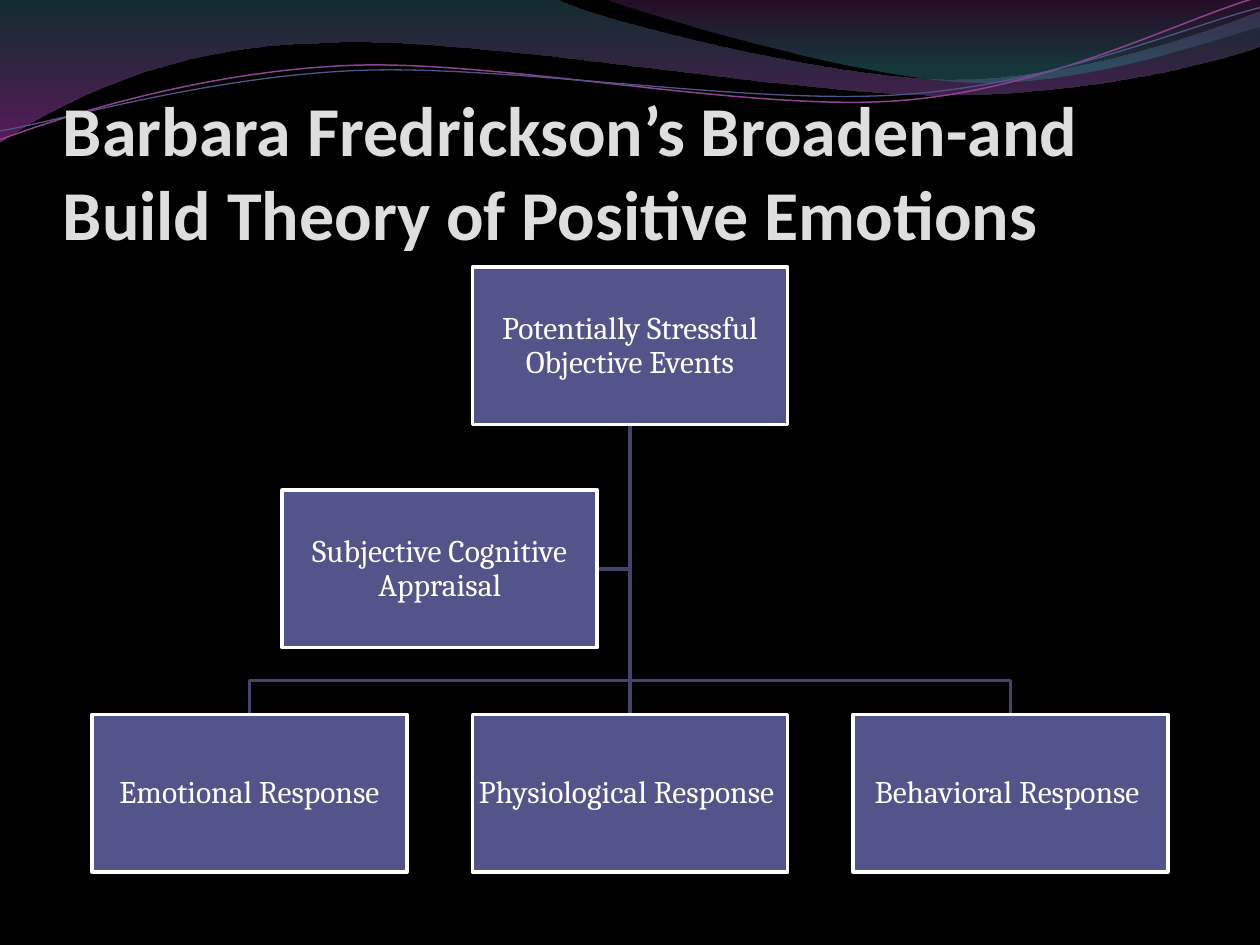
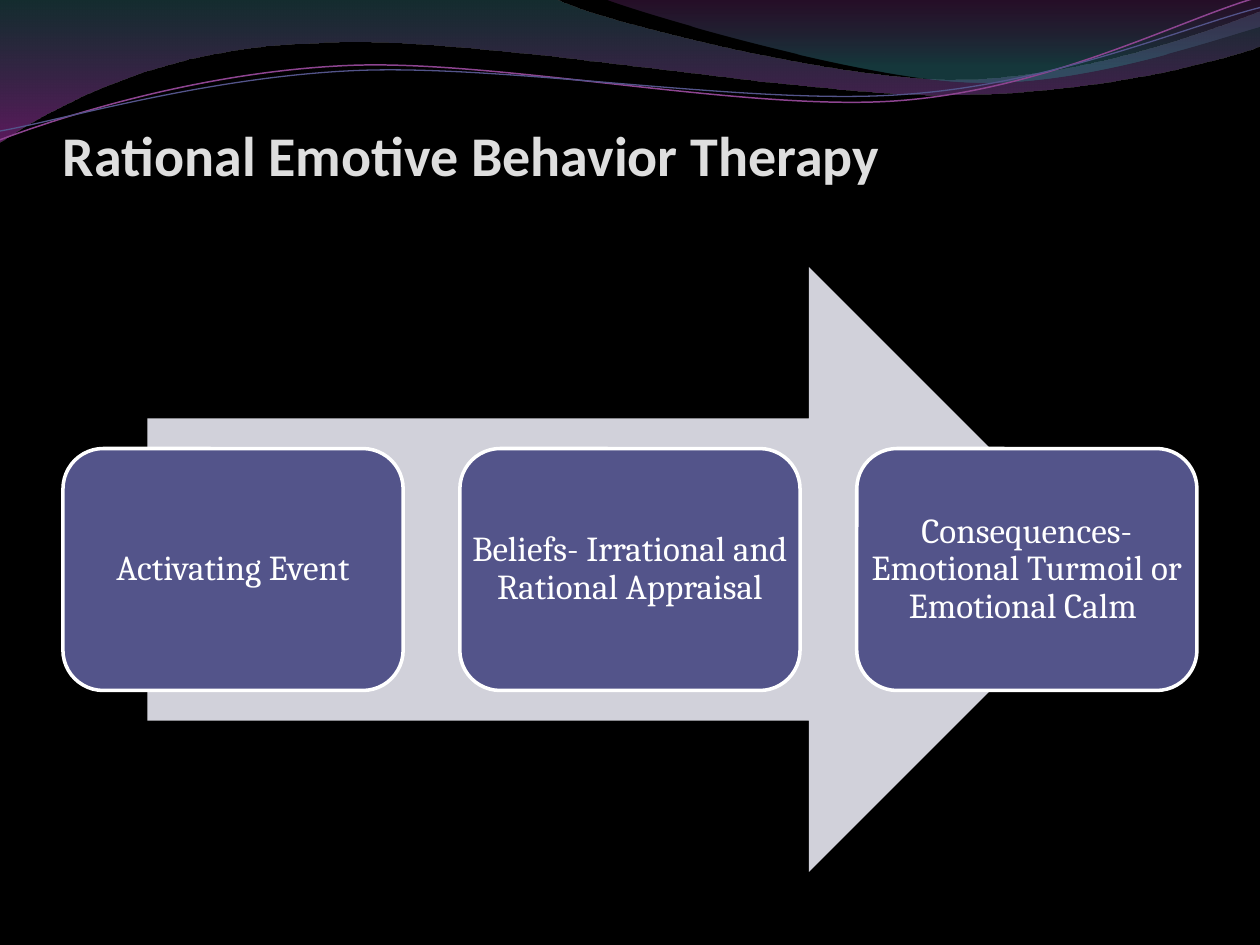
from lxml import etree
from pptx import Presentation
from pptx.dml.color import RGBColor
from pptx.enum.shapes import MSO_CONNECTOR, MSO_SHAPE
from pptx.enum.text import MSO_ANCHOR, MSO_AUTO_SIZE, PP_ALIGN
from pptx.oxml.ns import qn
from pptx.util import Inches, Pt

RECTANGLE = MSO_SHAPE.RECTANGLE
ROUNDED = MSO_SHAPE.ROUNDED_RECTANGLE
RIGHT_ARROW = MSO_SHAPE.RIGHT_ARROW
STRAIGHT = MSO_CONNECTOR.STRAIGHT
TOP, BOTTOM = 0, 2

BLACK = RGBColor(0x00, 0x00, 0x00)
WHITE = RGBColor(0xFF, 0xFF, 0xFF)
TITLE_GREY = RGBColor(0xDE, 0xDE, 0xDE)
INDIGO = RGBColor(0x53, 0x54, 0x8A)
DARK_INDIGO = RGBColor(0x42, 0x43, 0x6F)
PALE_LILAC = RGBColor(0xD1, 0xD1, 0xDA)
TEAL = RGBColor(0x2D, 0x63, 0x68)
MAGENTA = RGBColor(0xA5, 0x30, 0xA9)
PLUM = RGBColor(0x7F, 0x2F, 0x82)
SEA_GREEN = RGBColor(0x2F, 0x7B, 0x82)
ORCHID = RGBColor(0x8D, 0x44, 0x90)

TITLE_FONT, BODY_FONT = "Calibri", "Cambria"

# Outlines in inches: a start point, then line ends (x, y)
# or curves (control 1, control 2, end)
BROAD_WAVE = [
    (0, 0), (4.4, -0.01),
    (4.76, 0.17, 6.64, 0.63, 7.58, 0.63), (8.53, 0.63, 9.58, 0.26, 10, 0.09),
    (10.01, 0.36),
    (9.83, 0.44, 8.7, 0.76, 7.46, 0.75), (6.22, 0.75, 3.82, 0.28, 2.57, 0.34),
    (1.29, 0.36, 0.46, 0.83, -0.01, 1.13),
]
CORNER_WAVE = [
    (4.79, -0.01),
    (5.09, 0.11, 6.82, 0.62, 7.69, 0.65), (8.56, 0.69, 9.61, 0.32, 10, 0.21),
    (10, 0),
]
ORCHID_LINE = [
    (0, 1.11), (0.48, 0.93, 1.58, 0.57, 2.77, 0.52),
    (3.95, 0.47, 5.93, 0.89, 7.13, 0.8), (8.33, 0.71, 9.38, 0.15, 9.98, -0.02),
]
INDIGO_LINE = [
    (0, 1.04), (0.47, 0.96, 1.64, 0.61, 2.83, 0.56),
    (4.03, 0.51, 5.97, 0.84, 7.17, 0.75), (8.36, 0.67, 9.41, 0.21, 10, 0.06),
]
# Gradient stops: position, colour, opacity in percent
WAVES = [
    (BROAD_WAVE, [(0, TEAL, 45), (1, MAGENTA, 55)]),
    (CORNER_WAVE, [(0, PLUM, 30), (0.8, SEA_GREEN, 45)]),
]
WAVE_LINES = [(ORCHID_LINE, ORCHID, 0.85), (INDIGO_LINE, INDIGO, 0.75)]


def add_outline(slide, outline, line_colour=None, line_width=0):
    """Draw an open line in the given colour, or a closed area without one."""
    ends = [(Inches(piece[-2]), Inches(piece[-1])) for piece in outline]
    builder = slide.shapes.build_freeform(*ends[0])
    builder.add_line_segments(ends[1:], close=line_colour is None)
    shape = builder.convert_to_shape()
    shape.shadow.inherit = False
    # Turn the segments that have control points into curves
    segments = list(shape._element.iter(qn("a:lnTo")))
    for segment, piece in zip(segments, outline[1:]):
        if len(piece) == 6:
            segment.tag = qn("a:cubicBezTo")
            for i in (0, 2):
                control = etree.Element(qn("a:pt"))
                control.set("x", str(Inches(piece[i]) - shape.left))
                control.set("y", str(Inches(piece[i + 1]) - shape.top))
                segment.insert(i // 2, control)
    if line_colour is None:
        shape.line.fill.background()
    else:
        shape.fill.background()
        shape.line.color.rgb = line_colour
        shape.line.width = Pt(line_width)
    return shape


def add_box(slide, preset, left, top, width, height, text, size, inset):
    box = slide.shapes.add_shape(preset, Inches(left), Inches(top),
                                 Inches(width), Inches(height))
    box.shadow.inherit = False
    box.fill.solid()
    box.fill.fore_color.rgb = INDIGO
    box.line.color.rgb = WHITE
    box.line.width = Pt(2)
    frame = box.text_frame
    frame.word_wrap = True
    frame.vertical_anchor = MSO_ANCHOR.MIDDLE
    frame.margin_left = frame.margin_right = Inches(inset)
    frame.margin_top = frame.margin_bottom = Inches(inset)
    frame.text = text
    paragraph = frame.paragraphs[0]
    paragraph.alignment = PP_ALIGN.CENTER
    paragraph.line_spacing = 0.9
    font = paragraph.runs[0].font
    font.name, font.size = BODY_FONT, Pt(size)
    font.color.rgb = WHITE
    return box


prs = Presentation()
prs.slide_width, prs.slide_height = Inches(10), Inches(7.5)
background = prs.slide_master.background.fill
background.solid()
background.fore_color.rgb = BLACK

# Shared waves and titles: text, size, space below the text
TITLES = [
    ("Barbara Fredrickson’s Broaden-and Build Theory of Positive Emotions", 40, 0),
    ("Rational Emotive Behavior Therapy", 32, 0.53),
]
for title, size, space_below in TITLES:
    slide = prs.slides.add_slide(prs.slide_layouts[6])

    for outline, stops in WAVES:
        wave = add_outline(slide, outline)
        wave.fill.gradient()
        wave.fill.gradient_angle = 270
        for stop, (position, colour, _) in zip(wave.fill.gradient_stops, stops):
            stop.position = position
            stop.color.rgb = colour
        for colour_element, (_, _, opacity) in zip(
                wave._element.spPr.iter(qn("a:srgbClr")), stops):
            alpha = etree.SubElement(colour_element, qn("a:alpha"))
            alpha.set("val", str(opacity * 1000))

    for outline, colour, width in WAVE_LINES:
        add_outline(slide, outline, colour, width)

    heading = slide.shapes.add_textbox(Inches(0.5), Inches(0.77), Inches(9), Inches(1.25))
    frame = heading.text_frame
    frame.word_wrap = True
    frame.auto_size = MSO_AUTO_SIZE.NONE
    frame.vertical_anchor = MSO_ANCHOR.BOTTOM
    frame.margin_left = frame.margin_right = 0
    frame.margin_top, frame.margin_bottom = Inches(0.05), Inches(space_below)
    frame.text = title
    font = frame.paragraphs[0].runs[0].font
    font.name, font.size, font.bold = TITLE_FONT, Pt(size), True
    font.color.rgb = TITLE_GREY

theory_slide, therapy_slide = prs.slides

# Slide 1: hierarchy of events, appraisal and responses
BOX_W, BOX_H = 2.5, 1.25
CENTER_X, RESPONSE_PITCH = 5, 3.02
EVENTS_Y, APPRAISAL_Y, RESPONSES_Y = 2.12, 3.89, 5.67
APPRAISAL_X, BRANCH_Y = 2.24, 5.4
events_bottom = EVENTS_Y + BOX_H
appraisal_mid = APPRAISAL_Y + BOX_H / 2
response_centers = [CENTER_X + (i - 1) * RESPONSE_PITCH for i in range(3)]
left_x, _, right_x = response_centers

# Bent links, behind the boxes
add_outline(theory_slide, [(CENTER_X, events_bottom), (CENTER_X, appraisal_mid),
                           (APPRAISAL_X + BOX_W, appraisal_mid)], DARK_INDIGO, 2)
for response_x in (right_x, left_x):
    add_outline(theory_slide, [(CENTER_X, events_bottom), (CENTER_X, BRANCH_Y),
                               (response_x, BRANCH_Y), (response_x, RESPONSES_Y)],
                DARK_INDIGO, 2)

# Straight link from the events to the middle response
trunk = theory_slide.shapes.add_connector(
    STRAIGHT, Inches(CENTER_X), Inches(events_bottom),
    Inches(CENTER_X), Inches(RESPONSES_Y))
trunk.line.color.rgb = DARK_INDIGO
trunk.line.width = Pt(2)
etree.SubElement(trunk._element.spPr, qn("a:effectLst"))

hierarchy = [(CENTER_X - BOX_W / 2, EVENTS_Y, "Potentially Stressful Objective Events")]
responses = ["Emotional Response", "Physiological Response ", "Behavioral Response "]
for center, response in zip(response_centers, responses):
    hierarchy.append((center - BOX_W / 2, RESPONSES_Y, response))
hierarchy.append((APPRAISAL_X, APPRAISAL_Y, "Subjective Cognitive Appraisal"))
events, _, physiological, _, _ = [
    add_box(theory_slide, RECTANGLE, x, y, BOX_W, BOX_H, text, 18, 0.01)
    for x, y, text in hierarchy
]
trunk.begin_connect(events, BOTTOM)
trunk.end_connect(physiological, TOP)

# Slide 2: three stages on an arrow
arrow = therapy_slide.shapes.add_shape(
    RIGHT_ARROW, Inches(1.17), Inches(2.12), Inches(7.65), Inches(4.8))
arrow.shadow.inherit = False
arrow.fill.solid()
arrow.fill.fore_color.rgb = PALE_LILAC
arrow.line.fill.background()

STAGE_X, STAGE_PITCH = 0.5, 3.15
stages = [
    "Activating Event",
    "Beliefs- Irrational and Rational Appraisal",
    "Consequences- Emotional Turmoil or Emotional Calm ",
]
for i, stage in enumerate(stages):
    add_box(therapy_slide, ROUNDED, STAGE_X + i * STAGE_PITCH, 3.56, 2.7, 1.92,
            stage, 20, 0)

prs.save("out.pptx")
